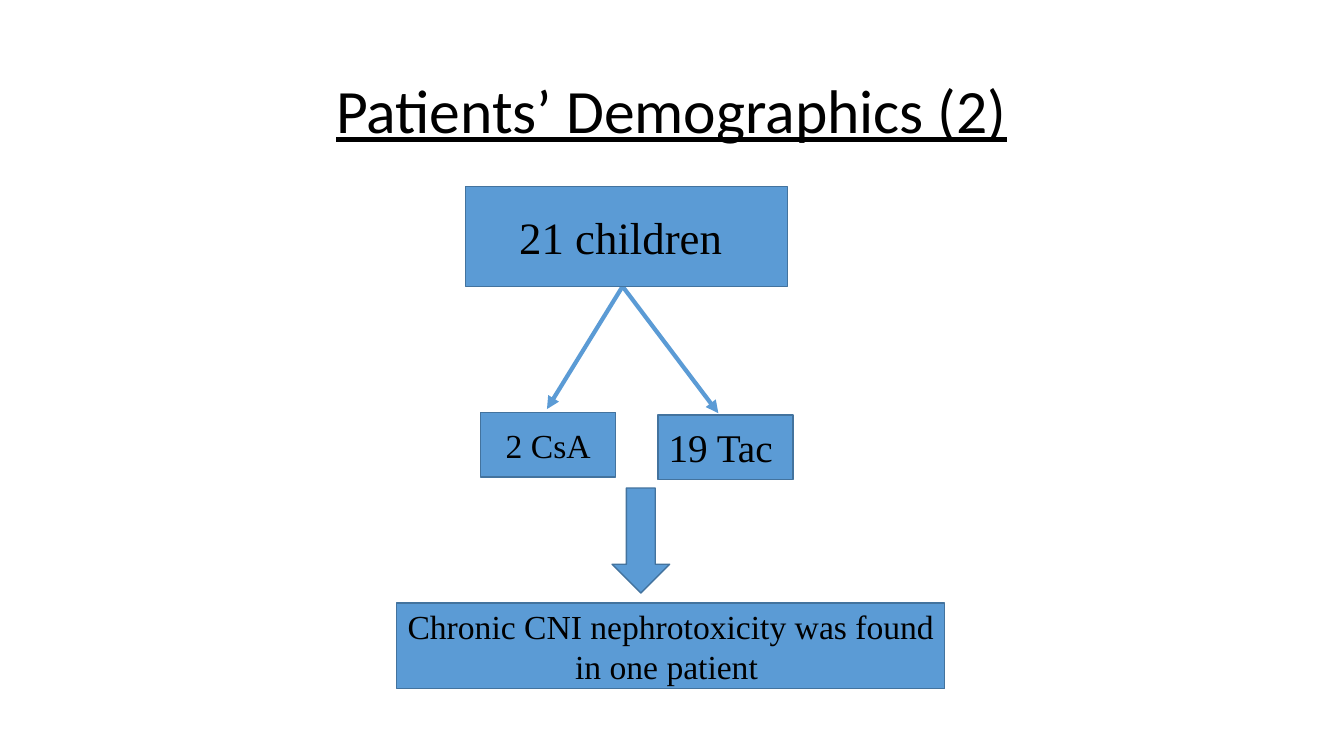
import pptx
import pptx.util
import pptx.dml.color
import pptx.enum.shapes
import pptx.enum.text
import pptx.oxml.ns
import lxml.etree

Pt = pptx.util.Pt
SHAPE = pptx.enum.shapes.MSO_SHAPE
BLACK = pptx.dml.color.RGBColor(0x00, 0x00, 0x00)
BLUE = pptx.dml.color.RGBColor(0x5B, 0x9B, 0xD5)
EDGE = pptx.dml.color.RGBColor(0x43, 0x73, 0x9E)
WIDTH, HEIGHT = pptx.util.Inches(13.33), pptx.util.Inches(7.5)
CELL = HEIGHT / 90


def grid(*cells):
    """Turn counts of grid cells into slide lengths."""
    return [round(n * CELL) for n in cells]


def write(tf, text, size, font):
    """Write one centred black run, anchored in the middle."""
    tf.word_wrap = True
    tf.vertical_anchor = pptx.enum.text.MSO_ANCHOR.MIDDLE
    p = tf.paragraphs[0]
    p.alignment = pptx.enum.text.PP_ALIGN.CENTER
    r = p.add_run()
    r.text = text
    r.font.size = Pt(size)
    r.font.name = font
    r.font.color.rgb = BLACK
    return p, r


def add_title(s, box):
    """Place the underlined title in its box."""
    sp = s.shapes.title
    sp.left, sp.top, sp.width, sp.height = grid(*box)
    p, r = write(sp.text_frame, "Patients’ Demographics (2)", 44, "Calibri")
    p.line_spacing = 0.9
    r.font.underline = True


def add_block(s, kind, box):
    """Add a blue outlined shape."""
    sp = s.shapes.add_shape(kind, *grid(*box))
    sp.shadow.inherit = False
    sp.fill.solid()
    sp.fill.fore_color.rgb = BLUE
    sp.line.color.rgb = EDGE
    sp.line.width = Pt(1)
    return sp


def add_arrow(s, start, end):
    """Add a straight blue arrow."""
    cn = s.shapes.add_connector(
        pptx.enum.shapes.MSO_CONNECTOR.STRAIGHT, *grid(*start, *end))
    cn.line.color.rgb = BLUE
    cn.line.width = Pt(3)
    qn = pptx.oxml.ns.qn
    ln = cn._element.spPr.find(qn("a:ln"))
    lxml.etree.SubElement(ln, qn("a:tailEnd"), type="triangle")
    lxml.etree.SubElement(cn._element.spPr, qn("a:effectLst"))


def add_flow(s, box):
    """Draw the patient flow within its box."""
    x, y, w, h = box
    fork = (x + 26.9, y + 11.9)
    for dx, dy in ((17.9, 26.5), (38.3, 27)):
        add_arrow(s, fork, (x + dx, y + dy))
    blocks = (
        ("21 children ", 32, 8.2, 0, 38.3, 11.9),
        ("2 CsA", 24, 10, 26.9, 16.1, 7.7),
        ("19 Tac ", 28, 31.1, 27.2, 16.1, 7.7),
        ("Chronic CNI nephrotoxicity was found in one patient ", 24,
         0, h - 10.2, w, 10.2),
    )
    for text, size, dx, dy, bw, bh in blocks:
        sp = add_block(s, SHAPE.RECTANGLE, (x + dx, y + dy, bw, bh))
        write(sp.text_frame, text, size, "Times New Roman")
    add_block(s, SHAPE.DOWN_ARROW, (x + 25.65, y + 35.9, 6.85, 12.5))


def main():
    """Build and save the slide."""
    prs = pptx.Presentation()
    prs.slide_width, prs.slide_height = WIDTH, HEIGHT
    s = prs.slides.add_slide(prs.slide_layouts[5])
    add_title(s, (11, 4.8, 137.9, 17.4))
    add_flow(s, (47.2, 22.2, 65.25, 59.8))
    prs.save("out.pptx")


if __name__ == "__main__":
    main()
